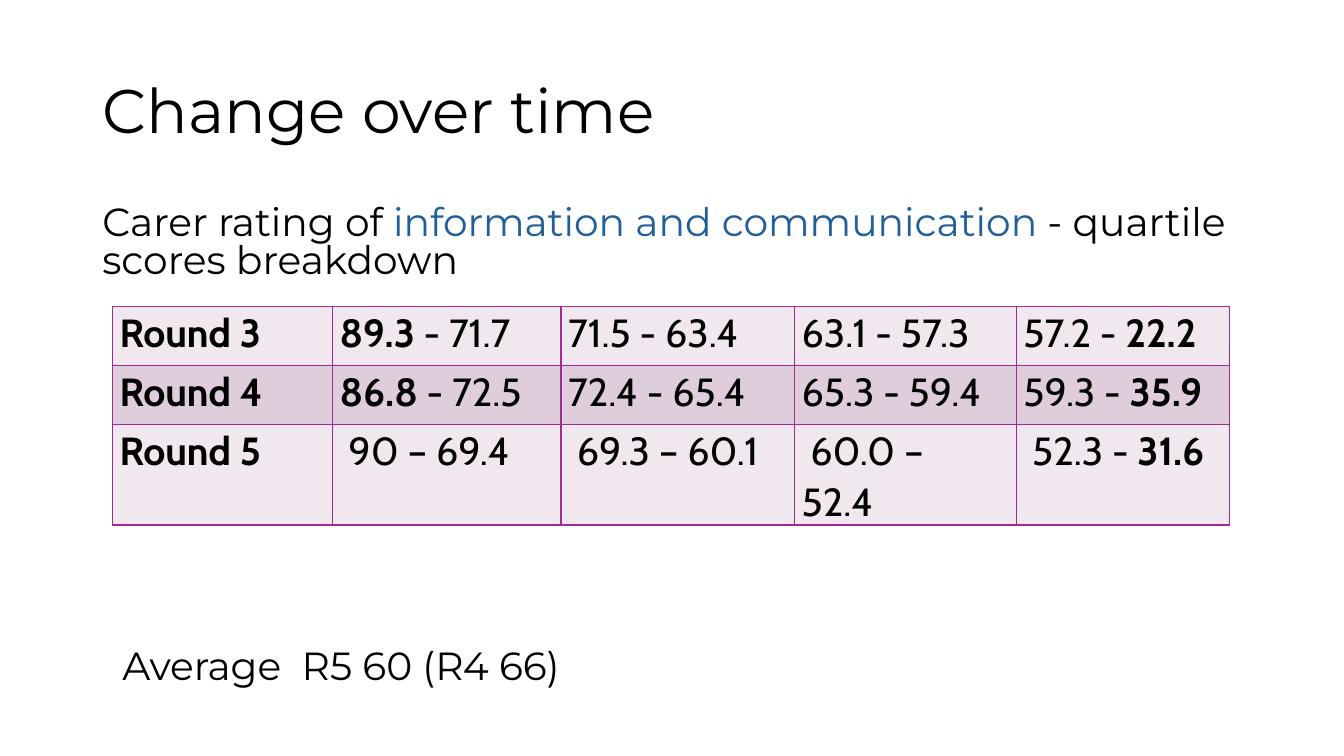
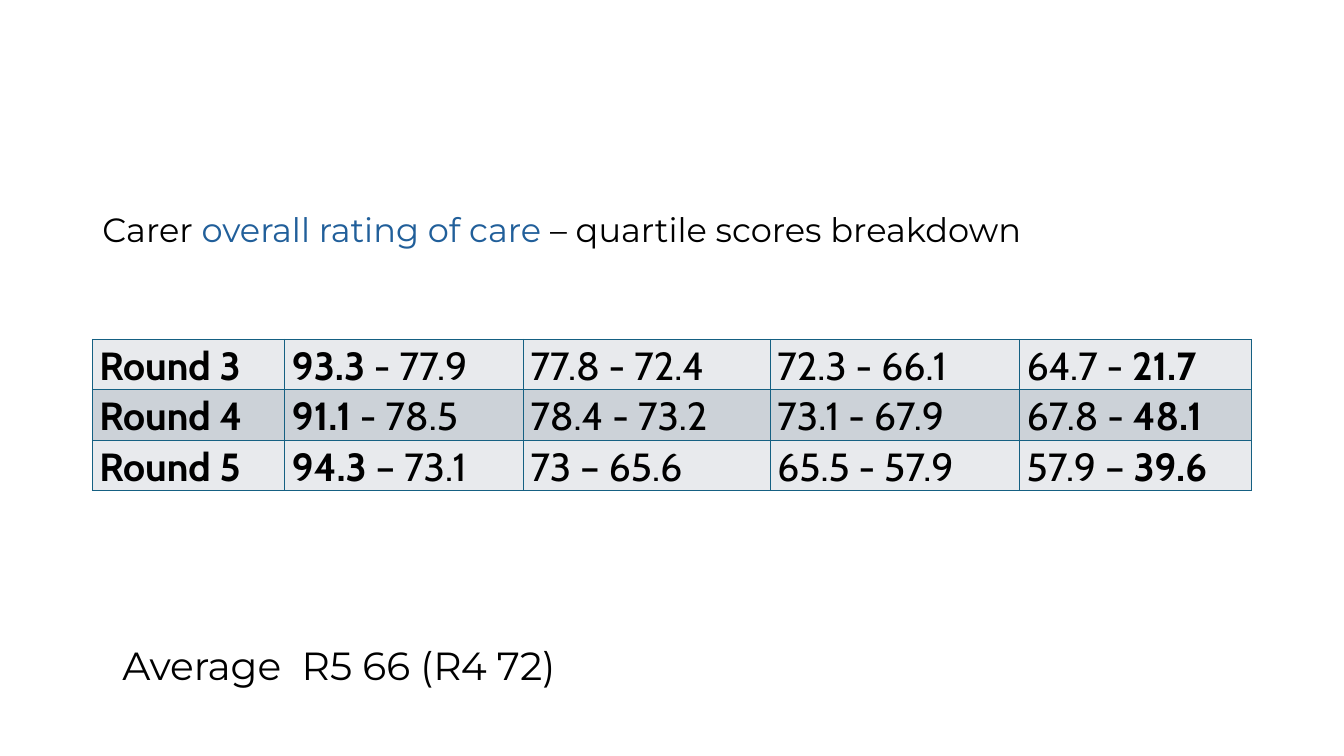
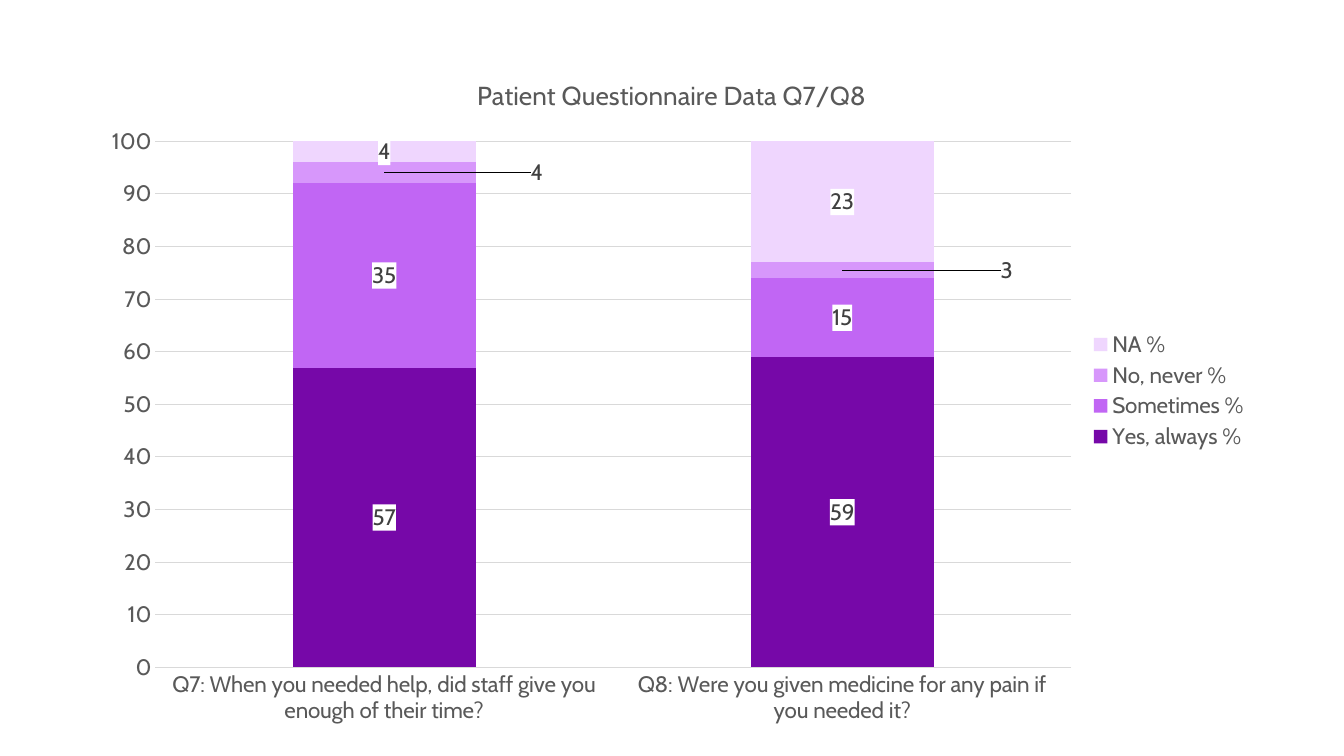
import lxml.etree
import pptx
import pptx.chart.data
import pptx.dml.color
import pptx.enum.chart
import pptx.enum.text
import pptx.oxml.ns
import pptx.util

WIDTH, HEIGHT = pptx.util.Inches(13.33), pptx.util.Inches(7.5)
COLUMNS, ROWS = 160, 90
COLORS = {
    "text": "000000",
    "accent": "215F9A",
    "axis": "595959",
    "label": "404040",
    "grid": "D9D9D9",
    "white": "FFFFFF",
}
PURPLE_TABLE = {"border": "A02B93", "bands": ["F0E8EE", "DFCDDC"]}
BLUE_TABLE = {"border": "156082", "bands": ["E8EAED", "CCD2D8"]}
TEXT_FONT, DATA_FONT = "Montserrat", "Cabin"
TITLE_BOX = (11, 4.8, 138, 17.4)
AVERAGE_BOX = (13.4, 76.4, 138, 10.8)

INFORMATION_ROWS = [
    ["Round 3", "89.3 - 71.7", "71.5 - 63.4", "63.1 - 57.3", "57.2 - 22.2"],
    ["Round 4", "86.8 - 72.5", "72.4 - 65.4", "65.3 - 59.4", "59.3 - 35.9"],
    ["Round 5", " 90 – 69.4", " 69.3 – 60.1", " 60.0 –\n52.4", " 52.3 - 31.6"],
]
OVERALL_ROWS = [
    ["Round 3", "93.3 - 77.9", "77.8 - 72.4", "72.3 - 66.1", "64.7 - 21.7"],
    ["Round 4", "91.1 - 78.5", "78.4 - 73.2", "73.1 - 67.9", "67.8 - 48.1"],
    ["Round 5", "94.3 – 73.1", "73 – 65.6", "65.5 - 57.9", "57.9 – 39.6"],
]
QUESTIONS = [
    "Q7: When you needed help, did staff give you enough of their time?",
    "Q8: Were you given medicine for any pain if you needed it?",
]
ANSWERS = [
    ("Yes, always %", (57, 59), "7608A8"),
    ("Sometimes %", (35, 15), "C166F4"),
    ("No, never %", (4, 3), "D797FB"),
    ("NA %", (4, 23), "EFD6FE"),
]
MOVED_LABELS = {"No, never %": [(0.13, 0), (0.14, 0)]}


def rgb(value):
    """Return the color object for a hex string."""
    return pptx.dml.color.RGBColor.from_string(value)


def across(columns):
    """Return the length of a number of grid columns."""
    return round(columns * WIDTH / COLUMNS)


def down(rows):
    """Return the length of a number of grid rows."""
    return round(rows * HEIGHT / ROWS)


def place(box):
    """Turn a grid box into left, top, width and height."""
    left, top, width, height = box
    return across(left), down(top), across(width), down(height)


def style_font(font, size, color, name=DATA_FONT, bold=False):
    """Set the look of a font."""
    font.size = pptx.util.Pt(size)
    font.name = name
    font.bold = bold
    font.color.rgb = rgb(color)


def add_run(paragraph, text, size, color, name, bold=False):
    """Add a run, with a line break at each newline."""
    for index, part in enumerate(text.split("\n")):
        if index:
            paragraph.add_line_break()
        run = paragraph.add_run()
        run.text = part
        style_font(run.font, size, color, name, bold)


def add_text(slide, box, runs, size, line_spacing=0.9, before=10, after=0, middle=False):
    """Add a text box of one paragraph made of (text, color) runs."""
    frame = slide.shapes.add_textbox(*place(box)).text_frame
    frame.word_wrap = True
    if middle:
        frame.vertical_anchor = pptx.enum.text.MSO_ANCHOR.MIDDLE
    paragraph = frame.paragraphs[0]
    paragraph.line_spacing = line_spacing
    paragraph.space_before = pptx.util.Pt(before)
    paragraph.space_after = pptx.util.Pt(after)
    for text, color in runs:
        add_run(paragraph, text, size, COLORS[color], TEXT_FONT)


def add_borders(cell, color):
    """Draw a one point line on every side of a cell."""
    properties = cell._tc.get_or_add_tcPr()
    for index, side in enumerate(("lnL", "lnR", "lnT", "lnB")):
        line = lxml.etree.Element(pptx.oxml.ns.qn("a:" + side), w=str(pptx.util.Pt(1)))
        fill = lxml.etree.SubElement(line, pptx.oxml.ns.qn("a:solidFill"))
        lxml.etree.SubElement(fill, pptx.oxml.ns.qn("a:srgbClr"), val=color)
        properties.insert(index, line)


def split_bold(text, column):
    """Split a score range into (text, bold) runs by its column."""
    if column == 0:
        return [(text, True)]
    if column == 1:
        cut = text.index(" ")
        return [(text[:cut], True), (text[cut:], False)]
    if column == 4:
        cut = text.rindex(" ") + 1
        return [(text[:cut], False), (text[cut:], True)]
    return [(text, False)]


def add_score_table(slide, origin, widths, row_height, rows, theme):
    """Add a banded table of quartile scores."""
    box = (*origin, sum(widths), row_height * len(rows))
    table = slide.shapes.add_table(len(rows), len(widths), *place(box)).table
    table.first_row = table.horz_banding = False
    for column, width in zip(table.columns, widths):
        column.width = across(width)
    for row_index, texts in enumerate(rows):
        table.rows[row_index].height = down(row_height)
        for column_index, text in enumerate(texts):
            cell = table.cell(row_index, column_index)
            cell.margin_left = cell.margin_right = pptx.util.Inches(0.07)
            cell.margin_top = cell.margin_bottom = 0
            cell.fill.solid()
            cell.fill.fore_color.rgb = rgb(theme["bands"][row_index % 2])
            add_borders(cell, theme["border"])
            paragraph = cell.text_frame.paragraphs[0]
            paragraph.line_spacing = 1.07
            paragraph.space_after = pptx.util.Pt(8)
            for part, bold in split_bold(text, column_index):
                add_run(paragraph, part, 28, COLORS["text"], DATA_FONT, bold)


def make_layout(**settings):
    """Return a manual chart layout element."""
    layout = lxml.etree.Element(pptx.oxml.ns.qn("c:layout"))
    manual = lxml.etree.SubElement(layout, pptx.oxml.ns.qn("c:manualLayout"))
    for name, value in settings.items():
        lxml.etree.SubElement(manual, pptx.oxml.ns.qn("c:" + name), val=str(value))
    return layout


def replace_layout(parent, index, layout):
    """Put a layout at an index of a chart part, dropping any former one."""
    for former in parent.findall(pptx.oxml.ns.qn("c:layout")):
        parent.remove(former)
    parent.insert(index, layout)


def style_series(series, color):
    """Color a series and set its value labels."""
    series.format.fill.solid()
    series.format.fill.fore_color.rgb = rgb(color)
    center = pptx.enum.chart.XL_LABEL_POSITION.CENTER
    labels = series.data_labels
    labels.show_value = True
    labels.number_format = "#,##0"
    labels.number_format_is_linked = False
    labels.position = center
    style_font(labels.font, 16, COLORS["label"])
    shape = lxml.etree.Element(pptx.oxml.ns.qn("c:spPr"))
    fill = lxml.etree.SubElement(shape, pptx.oxml.ns.qn("a:solidFill"))
    lxml.etree.SubElement(fill, pptx.oxml.ns.qn("a:srgbClr"), val=COLORS["white"])
    labels._element.find(pptx.oxml.ns.qn("c:numFmt")).addnext(shape)
    for index, (x, y) in enumerate(MOVED_LABELS.get(series.name, [])):
        label = series.points[index].data_label
        style_font(label.font, 16, COLORS["label"])
        label.position = center
        element = labels._element.findall(pptx.oxml.ns.qn("c:dLbl"))[index]
        replace_layout(element, 1, make_layout(x=x, y=y))


def style_axes(chart):
    """Set the scale, lines and text of both axes."""
    for axis in (chart.category_axis, chart.value_axis):
        axis.major_tick_mark = axis.minor_tick_mark = pptx.enum.chart.XL_TICK_MARK.NONE
        style_font(axis.tick_labels.font, 16, COLORS["axis"])
    value_axis = chart.value_axis
    value_axis.minimum_scale, value_axis.maximum_scale = 0, 100
    value_axis.major_unit = 10
    value_axis.tick_labels.number_format = "0"
    value_axis.tick_labels.number_format_is_linked = False
    value_axis.format.line.fill.background()
    for part in (chart.category_axis, value_axis.major_gridlines):
        part.format.line.color.rgb = rgb(COLORS["grid"])
        part.format.line.width = pptx.util.Pt(0.75)


def add_answer_chart(slide, box):
    """Add the stacked column chart of questionnaire answers."""
    data = pptx.chart.data.CategoryChartData()
    data.categories = QUESTIONS
    for name, values, _ in ANSWERS:
        data.add_series(name, values)
    kind = pptx.enum.chart.XL_CHART_TYPE.COLUMN_STACKED
    chart = slide.shapes.add_chart(kind, *place(box), data).chart
    style_font(chart.font, 16, COLORS["text"])
    chart.has_title = True
    paragraph = chart.chart_title.text_frame.paragraphs[0]
    add_run(paragraph, "Patient Questionnaire Data Q7/Q8", 18.6, COLORS["axis"], DATA_FONT)
    edges = {"xMode": "edge", "yMode": "edge"}
    replace_layout(chart.chart_title._element, 1, make_layout(**edges, x=0.33, y=0.04))
    plot_area = chart._chartSpace.chart.plotArea
    plot_layout = make_layout(layoutTarget="inner", **edges, x=0.06, y=0.14, w=0.78, h=0.76)
    replace_layout(plot_area, 0, plot_layout)
    chart.has_legend = True
    chart.legend.position = pptx.enum.chart.XL_LEGEND_POSITION.RIGHT
    chart.legend.include_in_layout = False
    style_font(chart.legend.font, 16, COLORS["axis"])
    plot = chart.plots[0]
    plot.gap_width, plot.overlap = 150, 100
    plot.vary_by_categories = False
    for series, (_, _, color) in zip(plot.series, ANSWERS):
        style_series(series, color)
    style_axes(chart)


def build_information_slide(slide):
    """Build the slide on information and communication scores."""
    add_text(slide, TITLE_BOX, [("Change over time", "text")], 44, before=0, middle=True)
    heading = [
        ("Carer rating of ", "text"),
        ("information and communication ", "accent"),
        ("- quartile scores breakdown", "text"),
    ]
    add_text(slide, (11, 24, 138, 10.8), heading, 28, line_spacing=0.8)
    widths = [26.2, 27.2, 27.8, 26.4, 25.4]
    add_score_table(slide, (13.4, 36.5), widths, 7, INFORMATION_ROWS, PURPLE_TABLE)
    add_text(slide, AVERAGE_BOX, [("Average  R5 60 (R4 66)", "text")], 28)


def build_overall_slide(slide):
    """Build the slide on overall care scores."""
    heading = [
        ("Carer ", "text"),
        ("overall rating of care ", "accent"),
        ("– quartile scores breakdown", "text"),
    ]
    add_text(slide, (11, 24, 138, 7.7), heading, 24, line_spacing=1.07, after=8)
    widths = [22.9, 28.4, 29.4, 29.7, 27.6]
    add_score_table(slide, (11, 40.4), widths, 6, OVERALL_ROWS, BLUE_TABLE)
    add_text(slide, AVERAGE_BOX, [("Average  R5 66 (R4 72)", "text")], 28)


def build_answer_slide(slide):
    """Build the slide with the questionnaire chart."""
    add_answer_chart(slide, (10.1, 5.3, 139.8, 82.4))


def main():
    """Build and save the presentation."""
    presentation = pptx.Presentation()
    presentation.slide_width, presentation.slide_height = WIDTH, HEIGHT
    for build in (build_information_slide, build_overall_slide, build_answer_slide):
        build(presentation.slides.add_slide(presentation.slide_layouts[6]))
    presentation.save("out.pptx")


if __name__ == "__main__":
    main()
